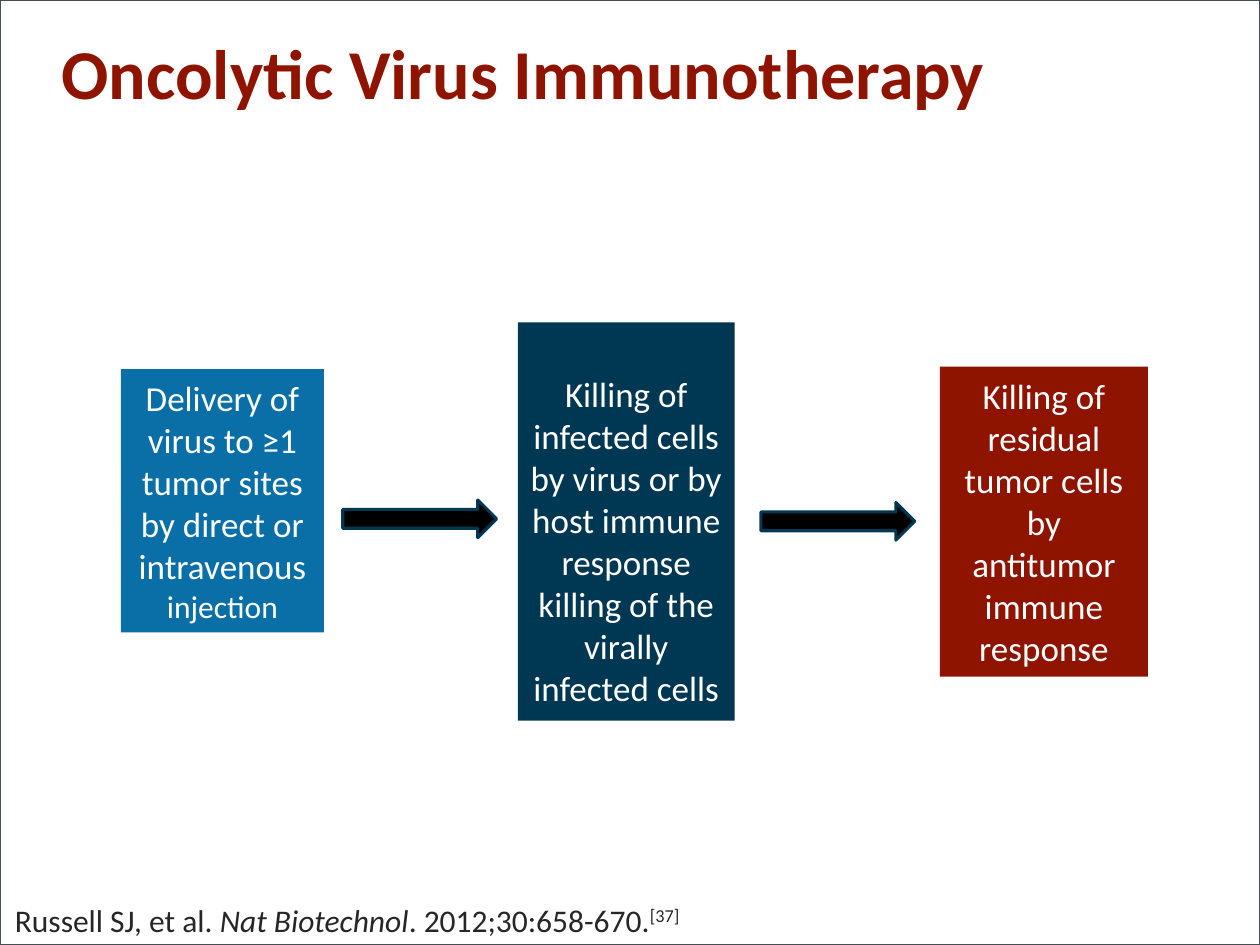
from pptx import Presentation
from pptx.dml.color import RGBColor
from pptx.enum.shapes import MSO_SHAPE as Shape
from pptx.enum.text import MSO_ANCHOR as Anchor, PP_ALIGN as Align
from pptx.util import Cm, Pt

RED = RGBColor(0x8E, 0x14, 0x00)
BLUE = RGBColor(0x0A, 0x6F, 0xA7)
NAVY = RGBColor(0x00, 0x38, 0x54)
SLATE = RGBColor(0x44, 0x4E, 0x54)
INK = RGBColor(0x26, 0x26, 0x26)
BLACK = RGBColor(0x00, 0x00, 0x00)
WHITE = RGBColor(0xFF, 0xFF, 0xFF)

STEPS = [
    ((2.44, 7.44, 4.09, 5.31), BLUE, 0.13,
     [("Delivery of virus to ≥1 tumor sites by direct or intravenous", 20),
      ("injection", 18)]),
    ((10.44, 6.5, 4.37, 8.03), NAVY, 0.89,
     [("Killing of infected cells by virus or by host immune response "
       "killing of the virally infected cells", 20)]),
    ((18.95, 7.39, 4.19, 6.25), RED, 0.13,
     [("Killing of residual tumor cells by antitumor immune response", 20)]),
]
ARROWS = [(6.91, 10.08), (15.34, 10.13)]
CITATION = [("Russell SJ, et al. ", False), ("Nat Biotechnol", True),
            (". 2012;30:658-670.", False)]


def style_font(font, size, color):
    font.name = "Calibri"
    font.size = Pt(size)
    font.color.rgb = color


def add_preset(slide, preset, bounds, fill=None, line=None, width=0):
    shape = slide.shapes.add_shape(preset, *map(Cm, bounds))
    shape.shadow.inherit = False
    if fill is None:
        shape.fill.background()
    else:
        shape.fill.solid()
        shape.fill.fore_color.rgb = fill
    if line is None:
        shape.line.fill.background()
    else:
        shape.line.color.rgb = line
        shape.line.width = Pt(width)
    return shape


def set_title(slide, text):
    title = slide.shapes.title
    title.left, title.top, title.width, title.height = map(
        Cm, (0.99, 0.46, 24.13, 1.96))
    title.text_frame.text = text
    title.text_frame.vertical_anchor = Anchor.MIDDLE
    heading = title.text_frame.paragraphs[0]
    heading.alignment = Align.LEFT
    style_font(heading.runs[0].font, 40, RED)
    heading.runs[0].font.bold = True


def add_step(slide, bounds, fill, top_inset, lines):
    frame = add_preset(slide, Shape.RECTANGLE, bounds, fill).text_frame
    frame.word_wrap = True
    frame.vertical_anchor = Anchor.MIDDLE
    frame.margin_top = Cm(top_inset)
    frame.text = "\n".join(text for text, _ in lines)
    for paragraph, (_, size) in zip(frame.paragraphs, lines):
        paragraph.alignment = Align.CENTER
        style_font(paragraph.runs[0].font, size, WHITE)


def add_citation(slide, parts, reference):
    frame = slide.shapes.add_textbox(
        *map(Cm, (0.05, 18.03, 14.02, 1.02))).text_frame
    frame.word_wrap = False
    paragraph = frame.paragraphs[0]
    for text, italic in parts + [(reference, False)]:
        run = paragraph.add_run()
        run.text = text
        style_font(run.font, 18, INK)
        run.font.italic = italic
    run._r.get_or_add_rPr().set("baseline", "30000")


def main():
    deck = Presentation()
    deck.slide_width, deck.slide_height = Cm(25.4), Cm(19.05)
    slide = deck.slides.add_slide(deck.slide_layouts[5])
    add_preset(slide, Shape.RECTANGLE, (0, 0, 25.4, 19.05),
               line=SLATE, width=1.5)
    set_title(slide, "Oncolytic Virus Immunotherapy")
    for step in STEPS:
        add_step(slide, *step)
    for left, top in ARROWS:
        add_preset(slide, Shape.RIGHT_ARROW, (left, top, 3.1, 0.76),
                   BLACK, NAVY, 1.75)
    add_citation(slide, CITATION, "[37]")
    deck.save("out.pptx")


if __name__ == "__main__":
    main()
